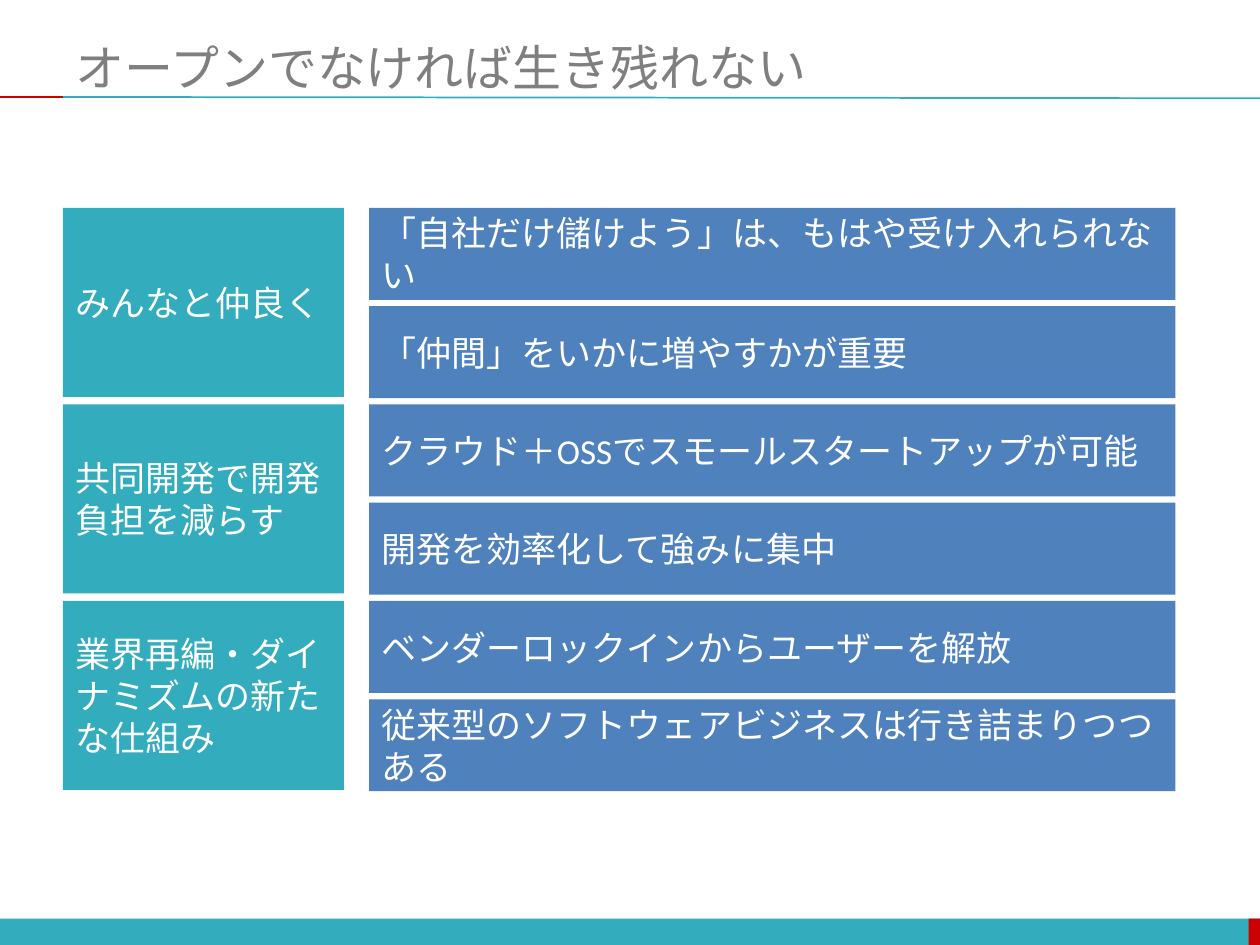
from lxml.etree import SubElement
from pptx import Presentation
from pptx.dml.color import RGBColor
from pptx.enum.shapes import MSO_CONNECTOR, MSO_SHAPE
from pptx.enum.text import MSO_ANCHOR, PP_ALIGN
from pptx.oxml.ns import qn
from pptx.util import Inches, Pt

HUES = {"teal": "33ACBD", "red": "CC0000", "blue": "4F81BD",
        "gray": "7F7F7F", "white": "FFFFFF"}
TOP, STEP, TALL, LOW = 1.65, 0.78, 1.5, 0.73

deck = Presentation()
deck.slide_width, deck.slide_height = Inches(10), Inches(7.5)
slide = deck.slides.add_slide(deck.slide_layouts[6])
shapes = slide.shapes


def write(shape, text, size, hue, face="Calibri"):
    frame = shape.text_frame
    frame.word_wrap = True
    frame.vertical_anchor = MSO_ANCHOR.MIDDLE
    para = frame.paragraphs[0]
    para.alignment = PP_ALIGN.LEFT
    run = para.add_run()
    run.text = text
    form = {"name": face, "size": Pt(size), "bold": False}
    for key, value in form.items():
        setattr(run.font, key, value)
    run.font.color.rgb = RGBColor.from_string(HUES[hue])


def block(left, top, width, height, hue):
    """Add a filled rectangle with no outline or shadow."""
    shape = shapes.add_shape(MSO_SHAPE.RECTANGLE, Inches(left), Inches(top),
                             Inches(width), Inches(height))
    shape.shadow.inherit = False
    shape.fill.solid()
    shape.fill.fore_color.rgb = RGBColor.from_string(HUES[hue])
    shape.line.fill.background()
    return shape


# Footer bar
block(0, 7.29, 10, 0.22, "teal")
block(9.91, 7.29, 0.1, 0.22, "red")

# Title and the rule below it
for start, end, drop, hue in [(0.5, 10, 0.78, "teal"), (0, 0.5, 0.77, "red")]:
    rule = shapes.add_connector(MSO_CONNECTOR.STRAIGHT, Inches(start),
                                Inches(0.77), Inches(end), Inches(drop))
    rule.line.color.rgb = RGBColor.from_string(HUES[hue])
    rule.line.width = Pt(1)
    SubElement(rule.element.spPr, qn("a:effectLst"))

title = shapes.add_textbox(Inches(0.5), Inches(0.3), Inches(9.5), Inches(0.46))
write(title, "オープンでなければ生き残れない", 28, "gray")

# Each theme spans two points
themes = [
    ("みんなと仲良く", "Noto Sans CJK JP",
     ["「自社だけ儲けよう」は、もはや受け入れられない",
      "「仲間」をいかに増やすかが重要"]),
    ("共同開発で開発負担を減らす", "Calibri",
     ["クラウド＋OSSでスモールスタートアップが可能",
      "開発を効率化して強みに集中"]),
    ("業界再編・ダイナミズムの新たな仕組み", "Calibri",
     ["ベンダーロックインからユーザーを解放",
      "従来型のソフトウェアビジネスは行き詰まりつつある"]),
]
for row, (theme, face, points) in enumerate(themes):
    top = TOP + 2 * STEP * row
    write(block(0.5, top, 2.23, TALL, "teal"), theme, 20, "white", face)
    for part, point in enumerate(points):
        bar = block(2.93, top + STEP * part, 6.4, LOW, "blue")
        write(bar, point, 20, "white")

deck.save("out.pptx")
